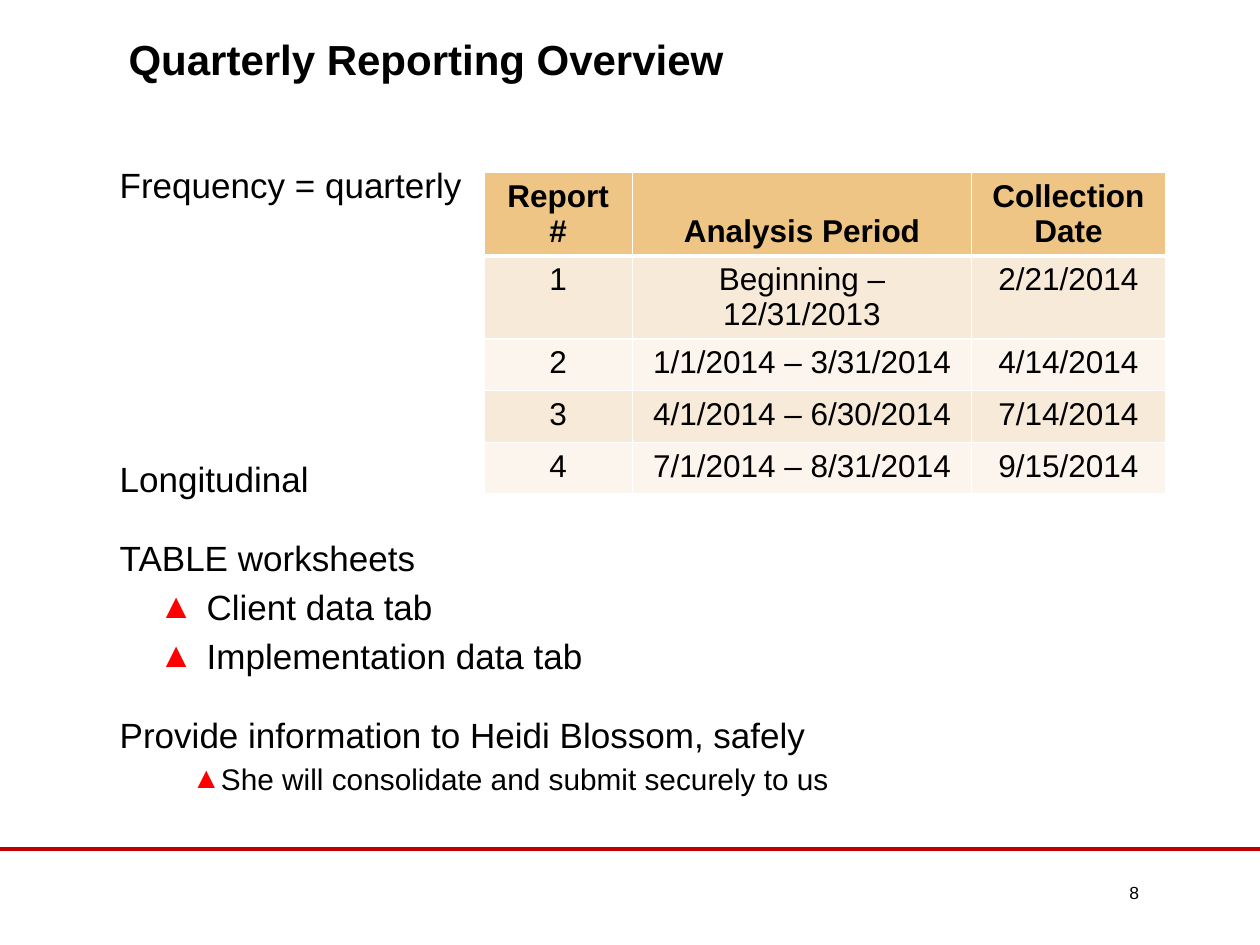
"""Build the quarterly reporting overview slide."""
import pptx
import pptx.util
import pptx.dml.color
import pptx.enum.shapes
import pptx.enum.text
import pptx.oxml
import pptx.oxml.ns

Inches, Pt = pptx.util.Inches, pptx.util.Pt
ALIGN = pptx.enum.text.PP_ALIGN
ANCHOR = pptx.enum.text.MSO_ANCHOR
COLORS = {"text": "000000", "rule": "C00000", "bullet": "FF0000", "border": "FFFFFF",
          "header": "EEC585", "odd": "F8EAD9", "even": "FCF5ED"}
TITLE = "Quarterly Reporting Overview"
STYLES = {"plain": (0, 0, 0, 20), "tab": (1, 0.69, -0.38, 20), "note": (1, 0.32, 0.25, 17)}
BODY = [
    ("Frequency = quarterly", "plain", 0),
    ("Longitudinal", "plain", 144),
    ("TABLE worksheets", "plain", 21),
    ("Client data tab", "tab", 4),
    ("Implementation data tab", "tab", 4),
    ("Provide information to Heidi Blossom, safely", "plain", 21),
    ("She will consolidate and submit securely to us", "note", 3),
]
COLUMNS = [1.18, 2.69, 1.54]
ROW_HEIGHT = 0.41
TABLE = [
    ("Report #", "Analysis Period", "Collection Date"),
    ("1", "Beginning – 12/31/2013", "2/21/2014"),
    ("2", "1/1/2014 – 3/31/2014", "4/14/2014"),
    ("3", "4/1/2014 – 6/30/2014", "7/14/2014"),
    ("4", "7/1/2014 – 8/31/2014", "9/15/2014"),
]


def rgb(name):
    return pptx.dml.color.RGBColor.from_string(COLORS[name])


def set_font(p, size, bold=False):
    p.font.name, p.font.size, p.font.bold = "Arial", Pt(size), bold
    p.font.color.rgb = rgb("text")


def frame(sp, box, anchor=ANCHOR.TOP):
    sp.left, sp.top, sp.width, sp.height = map(Inches, box)
    tf = sp.text_frame
    tf.word_wrap = True
    tf.auto_size = pptx.enum.text.MSO_AUTO_SIZE.NONE
    tf.vertical_anchor = anchor
    tf.margin_left = tf.margin_right = 0
    return tf


def add_element(parent, tag, **attrs):
    el = pptx.oxml.parse_xml(f"<a:{tag} {pptx.oxml.ns.nsdecls('a')}/>")
    for key, value in attrs.items():
        el.set(key, value)
    parent.append(el)
    return el


def set_bullet(p, left, indent, marked):
    pPr = p._p.get_or_add_pPr()
    pPr.set("marL", str(Inches(left)))
    pPr.set("indent", str(Inches(indent)))
    if marked:
        add_element(add_element(pPr, "buClr"), "srgbClr", val=COLORS["bullet"])
        add_element(pPr, "buFont", typeface="Arial")
        add_element(pPr, "buChar", char="▲")
    else:
        add_element(pPr, "buNone")


def add_body(s):
    tf = frame(s.placeholders[1], (0.95, 1.25, 8.03, 5.43))
    for i, (text, style, before) in enumerate(BODY):
        level, left, indent, size = STYLES[style]
        p = tf.add_paragraph() if i else tf.paragraphs[0]
        p.text, p.level = text, level
        p.space_before = Pt(before)
        set_bullet(p, left, indent, level > 0)
        set_font(p, size)


def set_bottom_border(cell, width):
    tcPr = cell._tc.get_or_add_tcPr()
    line = add_element(tcPr, "lnB", w=str(Pt(width)))
    add_element(add_element(line, "solidFill"), "srgbClr", val=COLORS["border"])
    tcPr.insert(0, line)


def add_table(s):
    rows = len(TABLE)
    table = s.shapes.add_table(rows, len(COLUMNS), Inches(3.84), Inches(1.37),
                               Inches(sum(COLUMNS)), Inches(ROW_HEIGHT * rows)).table
    for column, width in zip(table.columns, COLUMNS):
        column.width = Inches(width)
    for i, values in enumerate(TABLE):
        fill = "header" if i == 0 else ("even", "odd")[i % 2]
        for j, text in enumerate(values):
            cell = table.cell(i, j)
            cell.text = text
            cell.fill.solid()
            cell.fill.fore_color.rgb = rgb(fill)
            cell.vertical_anchor = ANCHOR.TOP if i else ANCHOR.BOTTOM
            set_bottom_border(cell, 1 if i else 3)
            p = cell.text_frame.paragraphs[0]
            p.alignment = ALIGN.CENTER
            set_font(p, 18, i == 0)


def main():
    prs = pptx.Presentation()
    prs.slide_width, prs.slide_height = Inches(10), Inches(7.5)
    s = prs.slides.add_slide(prs.slide_layouts[1])

    rule = s.shapes.add_connector(pptx.enum.shapes.MSO_CONNECTOR.STRAIGHT,
                                  0, Inches(6.74), prs.slide_width, Inches(6.74))
    rule.line.color.rgb = rgb("rule")
    rule.line.width = Pt(2)
    add_element(rule._element.spPr, "effectLst")

    tf = frame(s.shapes.title, (1.02, 0.12, 8.22, 0.75), ANCHOR.MIDDLE)
    p = tf.paragraphs[0]
    p.text, p.alignment, p.line_spacing = TITLE, ALIGN.LEFT, 0.9
    set_font(p, 24, True)

    add_body(s)
    add_table(s)

    number = s.shapes.add_textbox(0, 0, 0, 0)
    p = frame(number, (8.31, 6.95, 0.73, 0.27)).paragraphs[0]
    p.text, p.alignment = "8", ALIGN.RIGHT
    set_font(p, 10)
    prs.save("out.pptx")


if __name__ == "__main__":
    main()
